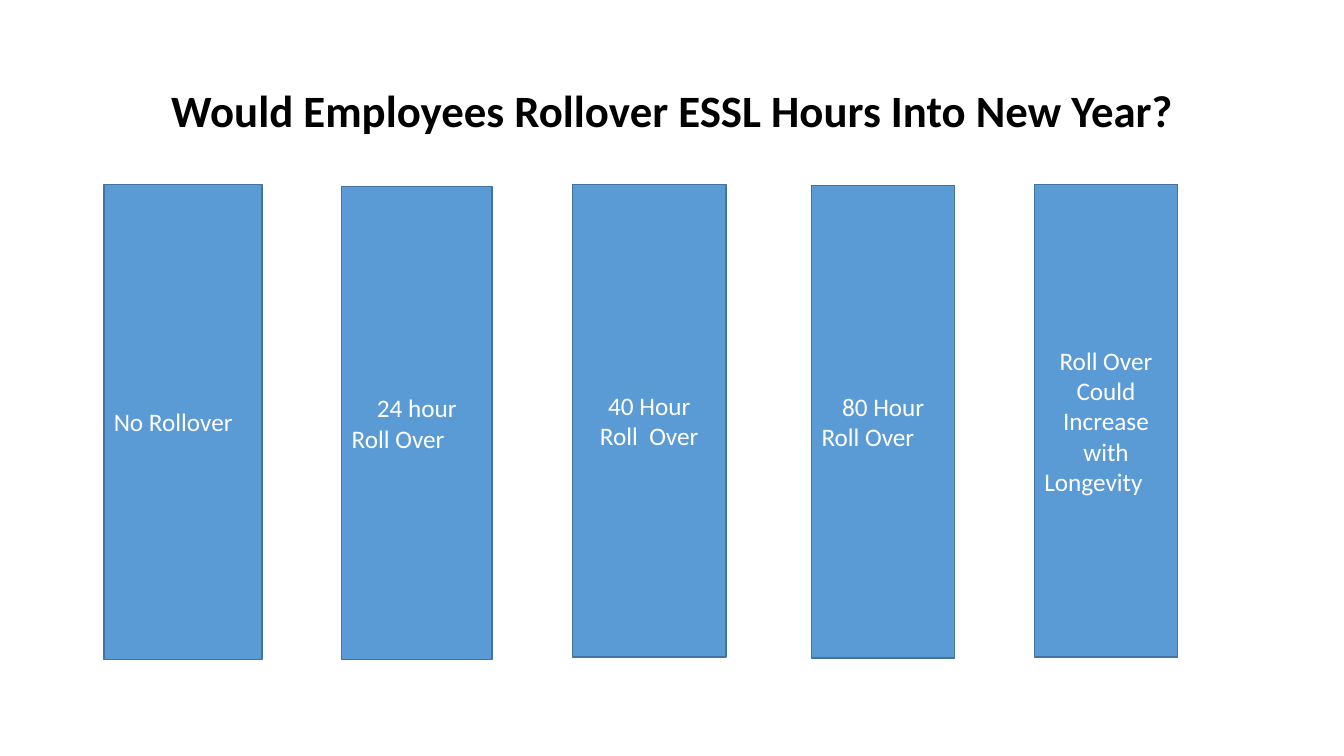
from pptx import Presentation
from pptx.dml.color import RGBColor
from pptx.enum.shapes import MSO_SHAPE
from pptx.enum.text import MSO_ANCHOR, MSO_AUTO_SIZE, PP_ALIGN
from pptx.util import Inches, Pt

COLORS = {"title": "000000", "bar": "5B9BD5", "outline": "43739E", "label": "FFFFFF"}
CENTER, LEFT = PP_ALIGN.CENTER, PP_ALIGN.LEFT

# Left, top, width and height in percent of the slide, then the label lines
OPTIONS = [
    ((7.73, 24.4, 11.78, 62.8), [("No Rollover", LEFT)]),
    ((25.43, 24.67, 11.18, 62.53), [("24 hour", CENTER), ("Roll Over", LEFT)]),
    ((42.61, 24.4, 11.4, 62.53), [("40 Hour", CENTER), ("Roll  Over", CENTER)]),
    ((60.39, 24.53, 10.65, 62.53), [("80 Hour", CENTER), ("Roll Over", LEFT)]),
    ((76.97, 24.4, 10.65, 62.53),
     [("Roll Over Could Increase with", CENTER), ("Longevity", LEFT)]),
]


class SlideBuilder:
    """Holds the style and the current slide."""

    font_name = "Calibri"

    def __init__(self, presentation):
        self.width = presentation.slide_width
        self.height = presentation.slide_height
        self.slide = presentation.slides.add_slide(presentation.slide_layouts[5])

    def color(self, name):
        return RGBColor.from_string(COLORS[name])

    def place(self, left, top, width, height):
        return (int(self.width * left / 100), int(self.height * top / 100),
                int(self.width * width / 100), int(self.height * height / 100))

    def format_paragraph(self, paragraph, size, color, alignment, bold=False):
        paragraph.alignment = alignment
        for run in paragraph.runs:
            run.font.name = self.font_name
            run.font.size = Pt(size)
            run.font.bold = bold
            run.font.color.rgb = self.color(color)

    def title(self, text, area):
        shape = self.slide.shapes.title
        shape.left, shape.top, shape.width, shape.height = self.place(*area)
        text_frame = shape.text_frame
        text_frame.text = text
        text_frame.auto_size = MSO_AUTO_SIZE.NONE
        text_frame.vertical_anchor = MSO_ANCHOR.MIDDLE
        paragraph = text_frame.paragraphs[0]
        paragraph.line_spacing = 0.9
        self.format_paragraph(paragraph, 32, "title", CENTER, bold=True)

    def option(self, area, lines):
        shape = self.slide.shapes.add_shape(
            MSO_SHAPE.FLOWCHART_PROCESS, *self.place(*area))
        shape.shadow.inherit = False
        shape.fill.solid()
        shape.fill.fore_color.rgb = self.color("bar")
        shape.line.color.rgb = self.color("outline")
        shape.line.width = Pt(1)
        text_frame = shape.text_frame
        text_frame.word_wrap = True
        text_frame.vertical_anchor = MSO_ANCHOR.MIDDLE
        text_frame.text = "\n".join(text for text, _ in lines)
        for paragraph, (_, alignment) in zip(text_frame.paragraphs, lines):
            self.format_paragraph(paragraph, 18, "label", alignment)


def main():
    presentation = Presentation()
    presentation.slide_width = Inches(13.33)
    presentation.slide_height = Inches(7.5)
    builder = SlideBuilder(presentation)

    # Heading
    builder.title("Would Employees Rollover ESSL Hours Into New Year?",
                  (6.9, 5.33, 86.27, 19.33))

    # Rollover options, from left to right
    for area, lines in OPTIONS:
        builder.option(area, lines)

    presentation.save("out.pptx")


if __name__ == "__main__":
    main()
